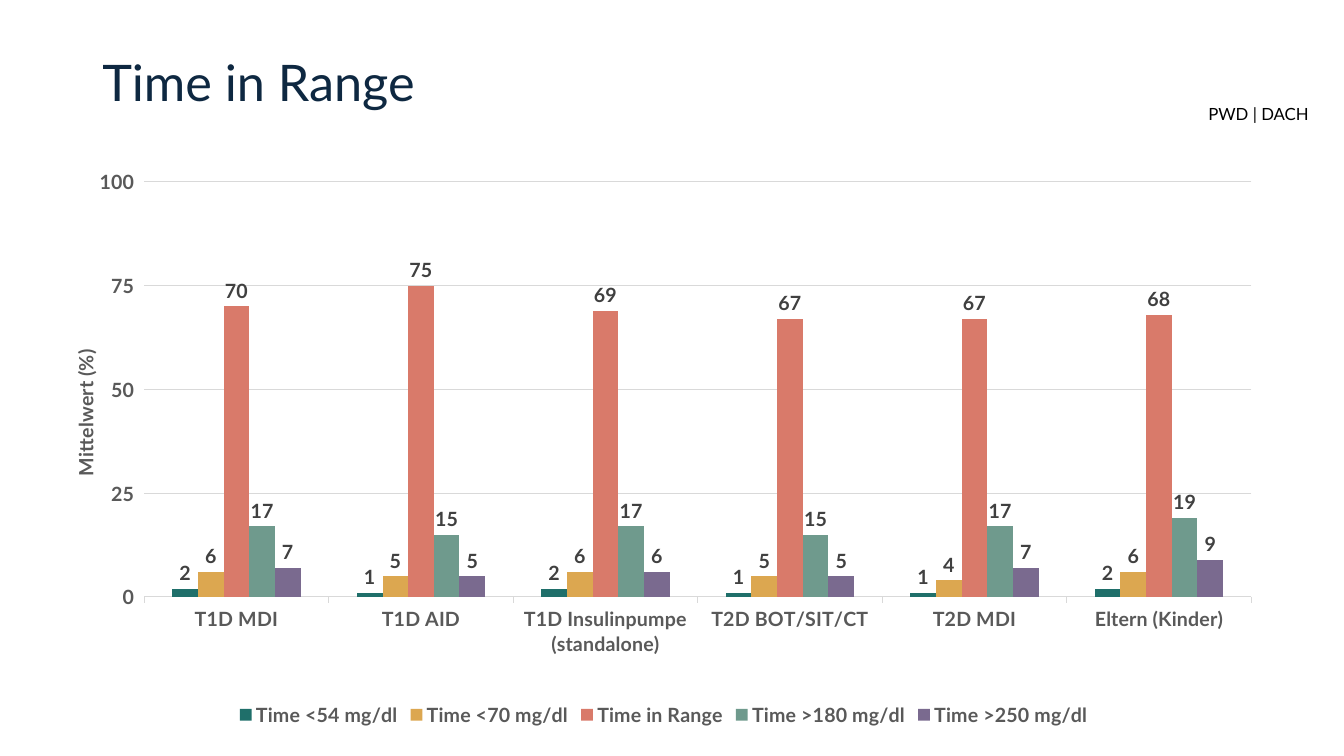
"""Build the Time in Range slide with its clustered column chart."""
from dataclasses import dataclass

from lxml import etree
from pptx import Presentation
from pptx import util as u
from pptx.chart.data import CategoryChartData
from pptx.dml.color import RGBColor
from pptx.enum import chart as charts, shapes, text
from pptx.oxml.ns import qn


@dataclass(frozen=True)
class Theme:
    """Hold the colours and type sizes of the slide."""

    font: str = "Lato"
    title: str = "0E2841"
    tag: str = "000000"
    axis: str = "595959"
    value: str = "404040"
    grid: str = "D9D9D9"
    title_size: int = 36
    tag_size: int = 12
    chart_size: int = 14
    grid_width: float = 0.75


THEME = Theme()
CATEGORIES = [
    "T1D MDI", "T1D AID", "T1D Insulinpumpe (standalone)",
    "T2D BOT/SIT/CT", "T2D MDI", "Eltern (Kinder)",
]
SERIES = [
    ("Time <54 mg/dl", "1F6F6A", [2, 1, 2, 1, 1, 2]),
    ("Time <70 mg/dl", "DCA750", [6, 5, 6, 5, 4, 6]),
    ("Time in Range", "D97A6A", [70, 75, 69, 67, 67, 68]),
    ("Time >180 mg/dl", "6F9A8D", [17, 15, 17, 15, 17, 19]),
    ("Time >250 mg/dl", "7A6A8F", [7, 5, 6, 5, 7, 9]),
]


def style_font(font, size, color, bold=False):
    """Apply the slide's typeface with a size, colour and weight."""
    font.name = THEME.font
    font.size = u.Pt(size)
    font.bold = bold
    font.color.rgb = RGBColor.from_string(color)


def style_line(line):
    """Draw a line in the light grid colour."""
    line.color.rgb = RGBColor.from_string(THEME.grid)
    line.width = u.Pt(THEME.grid_width)


def write_line(shape, words, size, color):
    """Put one vertically centred line of text into a shape and return its paragraph."""
    frame = shape.text_frame
    frame.text = words
    frame.word_wrap = True
    frame.vertical_anchor = text.MSO_ANCHOR.MIDDLE
    paragraph = frame.paragraphs[0]
    style_font(paragraph.runs[0].font, size, color)
    return paragraph


def add_title(slide, words):
    """Add the slide heading."""
    box = slide.shapes.add_textbox(u.Pt(66), u.Pt(18), u.Pt(828), u.Pt(85))
    paragraph = write_line(box, words, THEME.title_size, THEME.title)
    paragraph.line_spacing = 0.9


def add_tag(slide, words):
    """Add the right-aligned group tag."""
    shape = slide.shapes.add_shape(
        shapes.MSO_SHAPE.ROUNDED_RECTANGLE,
        u.Pt(852.5), u.Pt(70.6), u.Pt(83.5), u.Pt(20.9),
    )
    shape.shadow.inherit = False
    shape.fill.background()
    shape.line.fill.background()
    shape.text_frame.margin_right = 0
    paragraph = write_line(shape, words, THEME.tag_size, THEME.tag)
    paragraph.alignment = text.PP_ALIGN.RIGHT


def set_layout(parent, **settings):
    """Give a chart part a manual layout."""
    layout = parent.find(qn("c:layout"))
    if layout is None:
        layout = etree.Element(qn("c:layout"))
        parent.insert(0, layout)
    manual = etree.SubElement(layout, qn("c:manualLayout"))
    for name, value in settings.items():
        etree.SubElement(manual, qn(f"c:{name}"), val=str(value))


def style_axes(chart):
    """Format both axes, the grid and the value axis title."""
    category_axis, value_axis = chart.category_axis, chart.value_axis
    for axis in (category_axis, value_axis):
        axis.major_tick_mark = charts.XL_TICK_MARK.OUTSIDE
        style_font(axis.tick_labels.font, THEME.chart_size, THEME.axis, True)
    style_line(category_axis.format.line)
    value_axis.format.line.fill.background()
    value_axis.minimum_scale = 0
    value_axis.maximum_scale = 100
    value_axis.major_unit = 25
    value_axis.tick_labels.number_format = "#,##0"
    value_axis.tick_labels.number_format_is_linked = False
    style_line(value_axis.major_gridlines.format.line)

    title = value_axis.axis_title
    title.text_frame.text = "Mittelwert (%)"
    run = title.text_frame.paragraphs[0].runs[0]
    style_font(run.font, THEME.chart_size, THEME.axis, True)
    body = title._element.find(".//" + qn("a:bodyPr"))
    body.set("rot", "-5400000")
    body.set("vert", "horz")
    set_layout(title._element, xMode="edge", yMode="edge", x=0.01, y=0.32)


def style_series(series, color):
    """Colour a series and show its values above the columns."""
    series.format.fill.solid()
    series.format.fill.fore_color.rgb = RGBColor.from_string(color)
    series.invert_if_negative = False
    labels = series.data_labels
    labels.show_value = True
    labels.position = charts.XL_LABEL_POSITION.OUTSIDE_END
    labels.number_format = "#,##0"
    labels.number_format_is_linked = False
    style_font(labels.font, THEME.chart_size, THEME.value, True)


def add_range_chart(slide):
    """Add the column chart of glucose ranges by therapy group."""
    data = CategoryChartData()
    data.categories = CATEGORIES
    for name, _, values in SERIES:
        data.add_series(name, values)
    chart = slide.shapes.add_chart(
        charts.XL_CHART_TYPE.COLUMN_CLUSTERED,
        u.Pt(39.6), u.Pt(117.4), u.Pt(869), u.Pt(404.6), data,
    ).chart
    chart.has_title = False
    style_font(chart.font, THEME.chart_size, THEME.tag, True)
    plot = chart.plots[0]
    plot.gap_width = 219
    plot.overlap = 0
    plot.vary_by_categories = False
    for series, (_, color, _) in zip(plot.series, SERIES):
        style_series(series, color)
    style_axes(chart)
    chart.has_legend = True
    chart.legend.position = charts.XL_LEGEND_POSITION.BOTTOM
    chart.legend.include_in_layout = False
    style_font(chart.legend.font, THEME.chart_size, THEME.axis, True)
    set_layout(
        chart._chartSpace.find(".//" + qn("c:plotArea")),
        layoutTarget="inner", xMode="edge", yMode="edge",
        x=0.073, y=0.031, w=0.91, h=0.733,
    )


def main():
    """Build and save the presentation."""
    presentation = Presentation()
    presentation.slide_width = u.Pt(960)
    presentation.slide_height = u.Pt(540)
    slide = presentation.slides.add_slide(presentation.slide_layouts[6])
    add_title(slide, "Time in Range")
    add_tag(slide, "PWD | DACH")
    add_range_chart(slide)
    presentation.save("out.pptx")


if __name__ == "__main__":
    main()
